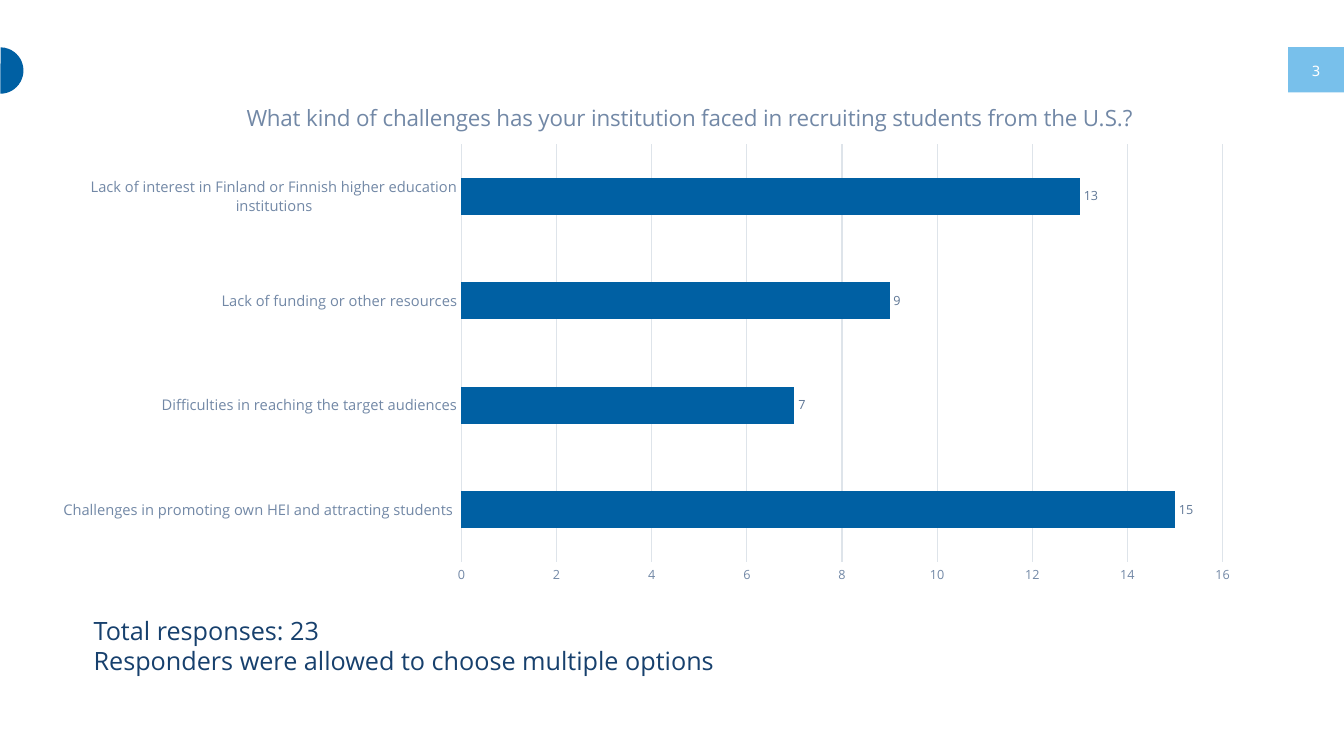
from lxml.etree import SubElement
from pptx import Presentation
from pptx.chart.data import CategoryChartData
from pptx.dml.color import RGBColor
from pptx.enum.chart import XL_CHART_TYPE as ChartType, XL_LABEL_POSITION as LabelPosition, XL_TICK_MARK as TickMark
from pptx.enum.shapes import MSO_SHAPE as Shape
from pptx.enum.text import MSO_ANCHOR as Anchor, PP_ALIGN as Align
from pptx.oxml.ns import qn
from pptx.util import Cm, Pt

COLORS = {
    "blue": "0060A3", "sky": "78C0EB", "navy": "17406D", "white": "FFFFFF",
    "axis": "7288A6", "label": "5E7695", "grid": "DEE4EA", "ink": "3C4B5F",
}
FONT = "Open Sans"
TITLE = "What kind of challenges has your institution faced in recruiting students from the U.S.?"
CHALLENGES = [
    ("Challenges in promoting own HEI and attracting students ", 15),
    ("Difficulties in reaching the target audiences", 7),
    ("Lack of funding or other resources", 9),
    ("Lack of interest in Finland or Finnish higher education institutions", 13),
]
DECORATIONS = [
    (Shape.RECTANGLE, (32.46, 1.19, 1.41, 1.14), "sky", 0, ()),
    (Shape.CHORD, (-0.58, 1.19, 1.17, 1.17), "blue", 202, (41.26, 148.55)),
]
TEXTS = [
    (["3"], (32.46, 1.27, 1.41, 1.02), Anchor.MIDDLE, Align.CENTER,
     {"size": 10, "name": "DejaVu Sans", "color": "white"}),
    (["Total responses: 23", "Responders were allowed to choose multiple options"],
     (2.11, 15.37, 16.56, 1.8), Anchor.TOP, Align.LEFT,
     {"size": 18, "name": FONT, "color": "navy"}),
]
CHART_BOX = (0.99, 1.88, 30.61, 13.08)
TITLE_PLACE = {"x": 5.12, "y": 0.55}
PLOT_PLACE = {"x": 10.64, "y": 1.75, "w": 19.18, "h": 10.53}


def rgb(name):
    return RGBColor.from_string(COLORS[name])


def box(lengths):
    return [Cm(length) for length in lengths]


def format_font(font, values):
    for key, value in values.items():
        if key == "color":
            font.color.rgb = rgb(value)
        else:
            setattr(font, key, Pt(value) if key == "size" else value)


def place(element, index, lengths, inner=False):
    for old in element.findall(qn("c:layout")):
        element.remove(old)
    layout = SubElement(element, qn("c:layout"))
    manual = SubElement(layout, qn("c:manualLayout"))
    if inner:
        SubElement(manual, qn("c:layoutTarget")).set("val", "inner")
    for key in ("x", "y"):
        SubElement(manual, qn(f"c:{key}Mode")).set("val", "edge")
    for key, length in lengths.items():
        whole = CHART_BOX[2] if key in "xw" else CHART_BOX[3]
        SubElement(manual, qn(f"c:{key}")).set("val", f"{length / whole:.4f}")
    element.insert(index, layout)


def add_decoration(slide, kind, lengths, color, rotation, adjustments):
    shape = slide.shapes.add_shape(kind, *box(lengths))
    shape.shadow.inherit = False
    shape.fill.solid()
    shape.fill.fore_color.rgb = rgb(color)
    shape.line.fill.background()
    shape.rotation = rotation
    for index, value in enumerate(adjustments):
        shape.adjustments[index] = value


def add_text(slide, lines, lengths, anchor, alignment, values):
    frame = slide.shapes.add_textbox(*box(lengths)).text_frame
    frame.word_wrap = True
    frame.vertical_anchor = anchor
    frame.text = "\n".join(lines)
    for paragraph in frame.paragraphs:
        paragraph.alignment = alignment
        format_font(paragraph.runs[0].font, values)


def add_challenges_chart(slide):
    data = CategoryChartData()
    data.categories = [name for name, count in CHALLENGES]
    data.add_series("Series 1", [count for name, count in CHALLENGES])
    chart = slide.shapes.add_chart(ChartType.BAR_CLUSTERED, *box(CHART_BOX), data).chart
    chart.has_legend = False
    format_font(chart.font, {"size": 10, "name": FONT, "color": "ink"})

    chart.has_title = True
    title = chart.chart_title
    title.text_frame.text = TITLE
    format_font(title.text_frame.paragraphs[0].runs[0].font,
                {"size": 16, "name": FONT, "bold": False, "color": "axis"})
    title.include_in_layout = False
    place(title._element, 1, TITLE_PLACE)
    place(chart._chartSpace.chart.plotArea, 0, PLOT_PLACE, inner=True)

    for axis, size in ((chart.category_axis, 10.5), (chart.value_axis, 9)):
        axis.major_tick_mark = axis.minor_tick_mark = TickMark.NONE
        format_font(axis.tick_labels.font, {"size": size, "name": FONT, "color": "axis"})
    chart.value_axis.minimum_scale = 0
    chart.value_axis.maximum_scale = 16
    chart.value_axis.major_unit = 2
    chart.value_axis.format.line.fill.background()
    for line in (chart.category_axis.format.line, chart.value_axis.major_gridlines.format.line):
        line.color.rgb = rgb("grid")
        line.width = Pt(0.75)

    plot = chart.plots[0]
    plot.gap_width = 182
    plot.vary_by_categories = False
    series = plot.series[0]
    series.format.fill.solid()
    series.format.fill.fore_color.rgb = rgb("blue")
    labels = series.data_labels
    labels.show_value = True
    labels.position = LabelPosition.OUTSIDE_END
    format_font(labels.font, {"size": 9, "name": FONT, "color": "label"})


def main():
    presentation = Presentation()
    presentation.slide_width, presentation.slide_height = Cm(33.87), Cm(19.05)
    slide = presentation.slides.add_slide(presentation.slide_layouts[6])
    for decoration in DECORATIONS:
        add_decoration(slide, *decoration)
    for text in TEXTS:
        add_text(slide, *text)
    add_challenges_chart(slide)
    presentation.save("out.pptx")


if __name__ == "__main__":
    main()
